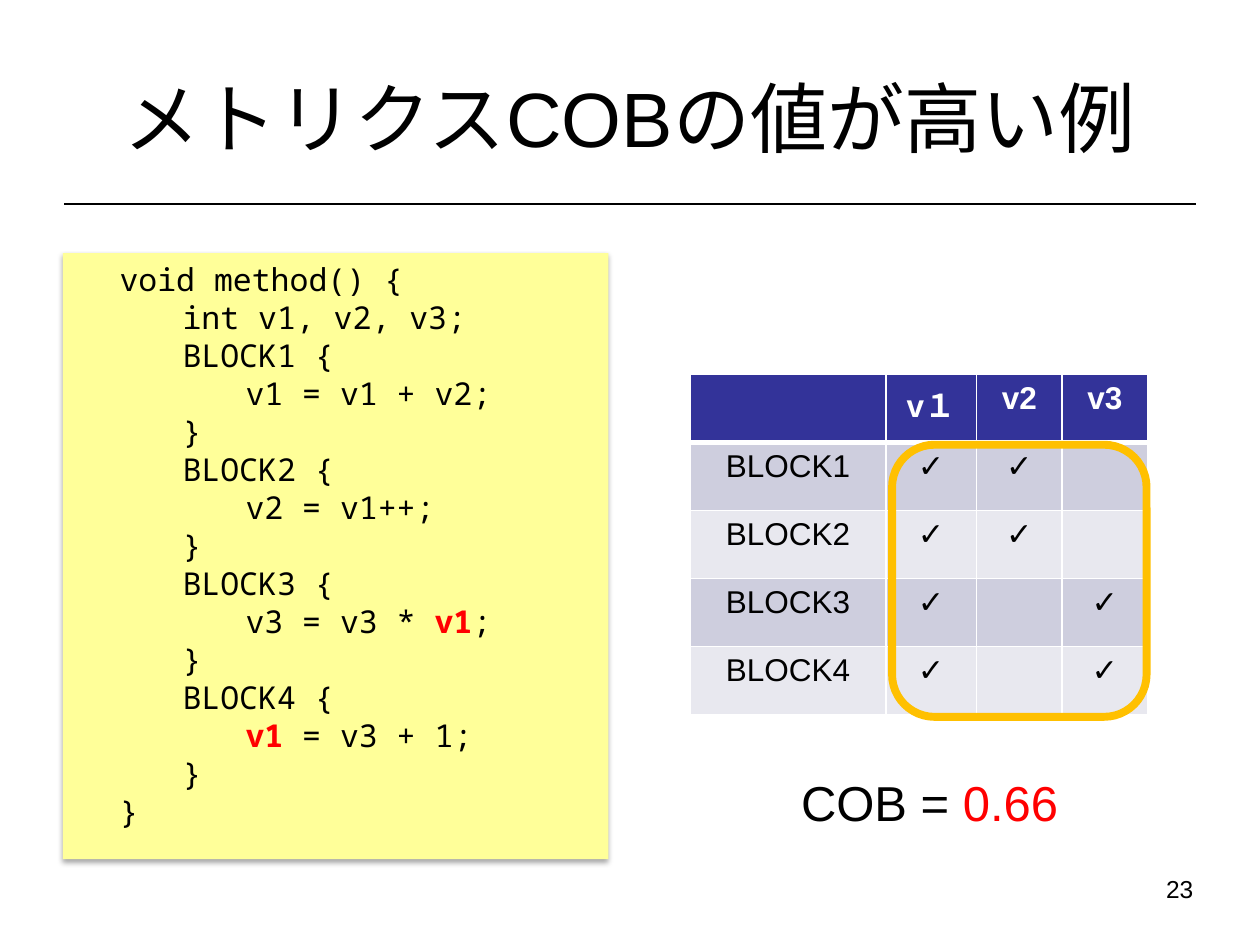
from lxml import etree
from pptx import Presentation
from pptx.dml.color import RGBColor
from pptx.enum import shapes, text
from pptx.oxml.ns import qn
from pptx.util import Emu, Inches, Pt

TITLE = "メトリクスCOBの値が高い例"
PAGE_NUMBER = "23"
# Each code line is a list of pieces; HOT pieces are highlighted
HOT = "v1"
CODE = [
    ["void method() {"],
    ["\tint v1, v2, v3;"],
    ["\tBLOCK1 {"],
    ["\t\tv1 = v1 + v2;"],
    ["\t}"],
    ["\tBLOCK2 {"],
    ["\t\tv2 = v1++;"],
    ["\t}"],
    ["\tBLOCK3 {"],
    ["\t\tv3 = v3 * ", HOT, ";"],
    ["\t}"],
    ["\tBLOCK4 {"],
    ["\t\t", HOT, " = v3 + 1;"],
    ["\t}"],
    ["}"],
]
USAGE = [
    ["", "v１", "v2", "v3"],
    ["BLOCK1", "✓", "✓", ""],
    ["BLOCK2", "✓", "✓", ""],
    ["BLOCK3", "✓", "", "✓"],
    ["BLOCK4", "✓", "", "✓"],
]
COLUMN_WIDTHS = [1.55, 0.72, 0.68, 0.68]
ROW_HEIGHT = 0.54
BLACK, WHITE, RED = "000000", "FFFFFF", "FF0000"
HEADER, BANDS = "333399", ["E8E8EF", "CECEDE"]


def color(value):
    return RGBColor.from_string(value)


def set_font(font, size, fill=BLACK, name="Arial", bold=False):
    font.size, font.name, font.bold = Pt(size), name, bold
    font.color.rgb = color(fill)


def add_box(page, left, top, width, height, wrap=True):
    box = page.shapes.add_textbox(
        Inches(left), Inches(top), Inches(width), Inches(height))
    box.text_frame.word_wrap = wrap
    return box.text_frame


def add_child(parent, tag, **attributes):
    child = etree.SubElement(parent, qn(tag))
    for key, value in attributes.items():
        child.set(key, str(value))
    return child


def set_borders(cell, bottom_width):
    properties = cell._tc.get_or_add_tcPr()
    widths = {"a:lnL": 1, "a:lnR": 1, "a:lnT": 1, "a:lnB": bottom_width}
    for position, (tag, width) in enumerate(widths.items()):
        line = add_child(properties, tag, w=Pt(width))
        add_child(add_child(line, "a:solidFill"), "a:srgbClr", val=WHITE)
        properties.insert(position, line)


deck = Presentation()
deck.slide_width, deck.slide_height = Inches(10), Inches(7.5)
page = deck.slides.add_slide(deck.slide_layouts[5])

# Title and rule
title = page.shapes.title
title.left, title.top = Inches(0.5), Inches(0.3)
title.width, title.height = Inches(8.99), Inches(1.25)
title.text_frame.text = TITLE
title.text_frame.vertical_anchor = text.MSO_ANCHOR.MIDDLE
para = title.text_frame.paragraphs[0]
para.alignment = text.PP_ALIGN.CENTER
set_font(para.font, 44)

rule = page.shapes.add_connector(
    shapes.MSO_CONNECTOR.STRAIGHT,
    Inches(0.51), Inches(1.62), Inches(9.49), Inches(1.62))
rule.line.color.rgb = color(BLACK)
rule.line.width = Pt(0.75)
add_child(rule._element.spPr, "a:effectLst")

# Page number
para = add_box(page, 8.31, 6.89, 1.26, 0.32).paragraphs[0]
para.text = PAGE_NUMBER
para.alignment = text.PP_ALIGN.RIGHT
set_font(para.font, 14)

# Code panel
panel = page.shapes.add_shape(
    shapes.MSO_SHAPE.RECTANGLE,
    Inches(0.5), Inches(2.01), Inches(4.33), Inches(4.81))
panel.fill.solid()
panel.fill.fore_color.rgb = color("FFFF99")
panel.line.fill.background()
effects = add_child(panel._element.spPr, "a:effectLst")
shadow = add_child(effects, "a:outerShdw", blurRad=Pt(3.1), dist=Pt(1.8),
                   dir=90 * 60000, rotWithShape=0)
add_child(add_child(shadow, "a:srgbClr", val=BLACK), "a:alpha", val=35000)

code = add_box(page, 0.85, 2.01, 3.98, 4.64)
for index, pieces in enumerate(CODE):
    para = code.add_paragraph() if index else code.paragraphs[0]
    para.line_spacing = Pt(21.7)
    tabs = add_child(para._p.get_or_add_pPr(), "a:tabLst")
    for stop in (0.5, 1):
        add_child(tabs, "a:tab", pos=Inches(stop), algn="l")
    set_font(para.font, 18, name="Noto Sans Mono")
    for piece in pieces:
        span = para.add_run()
        span.text = piece
        if piece == HOT:
            span.font.bold = True
            span.font.color.rgb = color(RED)

# Usage table
table = page.shapes.add_table(
    len(USAGE), len(COLUMN_WIDTHS), Inches(5.48), Inches(2.97),
    Inches(sum(COLUMN_WIDTHS)), Inches(ROW_HEIGHT * len(USAGE))).table
for column, width in zip(table.columns, COLUMN_WIDTHS):
    column.width = Inches(width)
for r, values in enumerate(USAGE):
    table.rows[r].height = Inches(ROW_HEIGHT)
    is_header = r == 0
    for c, value in enumerate(values):
        cell = table.cell(r, c)
        cell.fill.solid()
        cell.fill.fore_color.rgb = color(HEADER if is_header else BANDS[r % 2])
        set_borders(cell, 3 if is_header else 1)
        para = cell.text_frame.paragraphs[0]
        para.text = value
        para.alignment = text.PP_ALIGN.CENTER
        set_font(para.font, 18, WHITE if is_header else BLACK, bold=is_header)

# Metric value
para = add_box(page, 6.26, 6.08, 2.27, 0.57, wrap=False).paragraphs[0]
set_font(para.font, 28)
for piece, fill in (("COB = ", BLACK), ("0.66", RED)):
    span = para.add_run()
    span.text = piece
    span.font.color.rgb = color(fill)

# Frame around the check marks
frame = page.shapes.add_shape(
    shapes.MSO_SHAPE.ROUNDED_RECTANGLE,
    Inches(7.08), Inches(3.53), Inches(2.02), Inches(2.16))
frame.shadow.inherit = False
frame.fill.background()
frame.line.color.rgb = color("FFC000")
frame.line.width = Pt(4.5)

deck.save("out.pptx")
